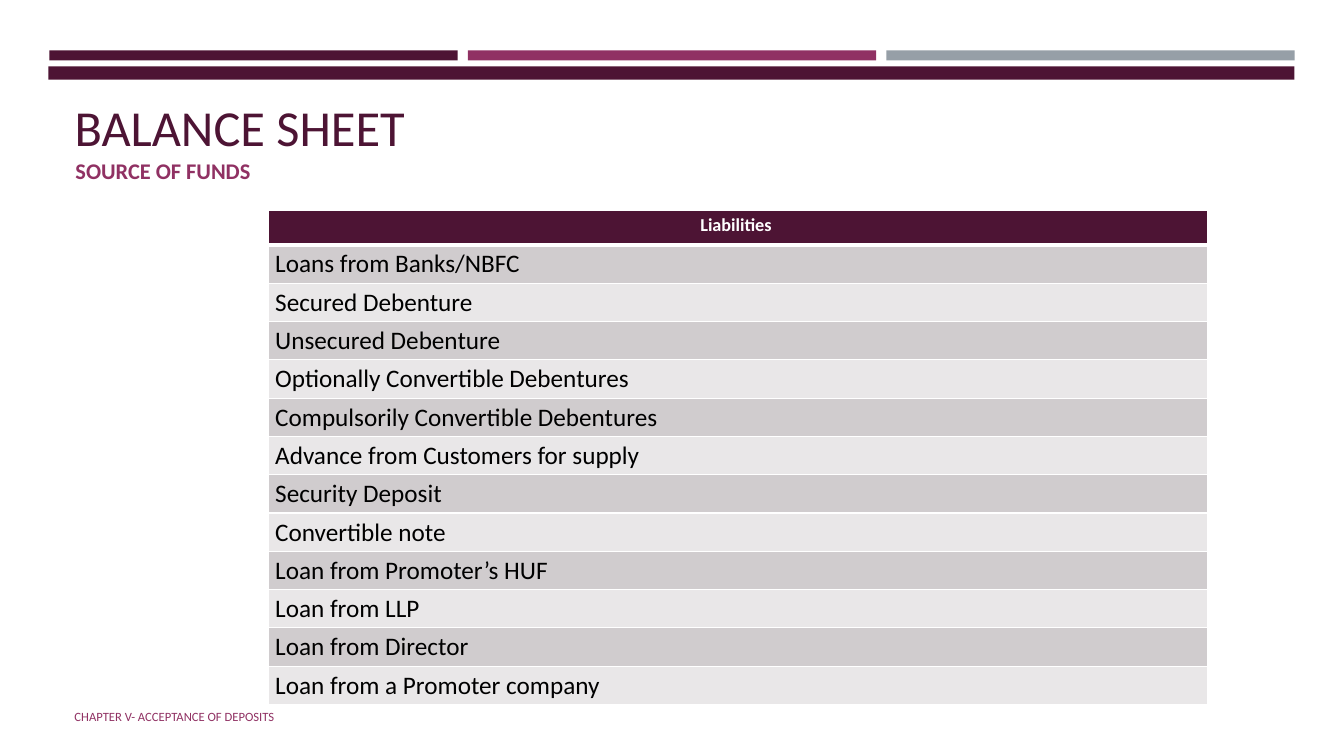
from dataclasses import dataclass
from typing import Any

from lxml.etree import SubElement
from pptx import Presentation
from pptx.dml.color import RGBColor
from pptx.enum.shapes import MSO_SHAPE
from pptx.enum.text import MSO_ANCHOR, PP_ALIGN
from pptx.oxml.ns import qn
from pptx.util import Inches, Pt

PLUM = RGBColor(0x4D, 0x14, 0x34)
ROSE = RGBColor(0x90, 0x31, 0x63)
GREY = RGBColor(0x96, 0x9F, 0xA7)
WHITE = RGBColor(0xFF, 0xFF, 0xFF)
BLACK = RGBColor(0x00, 0x00, 0x00)
BANDS = (RGBColor(0xD0, 0xCC, 0xCE), RGBColor(0xE9, 0xE7, 0xE8))

FUNDS = (
    "Loans from Banks/NBFC",
    "Secured Debenture",
    "Unsecured Debenture",
    "Optionally Convertible Debentures",
    "Compulsorily Convertible Debentures",
    "Advance from Customers for supply",
    "Security Deposit",
    "Convertible note",
    "Loan from Promoter’s HUF",
    "Loan from LLP",
    "Loan from Director",
    "Loan from a Promoter company",
)


@dataclass(frozen=True)
class Bar:
    left: float
    top: float
    width: float
    height: float
    color: RGBColor


@dataclass(frozen=True)
class Label:
    text: str
    size: int
    color: RGBColor
    bold: bool = False
    align: PP_ALIGN = PP_ALIGN.LEFT
    before: int = 0
    after: int = 0


BARS = (
    *(Bar(0.49 + 4.15 * i, 0.5, 4.05, 0.1, color)
      for i, color in enumerate((PLUM, ROSE, GREY))),
    Bar(0.48, 0.66, 12.36, 0.13, PLUM),
)


def apply(target: Any, values: dict[str, Any]) -> None:
    for name, value in values.items():
        setattr(target, name, value)


def draw_bar(slide: Any, bar: Bar) -> None:
    box = map(Inches, (bar.left, bar.top, bar.width, bar.height))
    shape = slide.shapes.add_shape(MSO_SHAPE.RECTANGLE, *box)
    shape.shadow.inherit = False
    shape.fill.solid()
    shape.fill.fore_color.rgb = bar.color
    shape.line.fill.background()


def write(frame: Any, label: Label) -> None:
    line = frame.paragraphs[0]
    apply(line, {
        "alignment": label.align,
        "space_before": Pt(label.before),
        "space_after": Pt(label.after),
        "line_spacing": 1.0,
    })
    run = line.add_run()
    run.text = label.text
    apply(run.font, {
        "name": "Calibri", "size": Pt(label.size), "bold": label.bold,
    })
    run.font.color.rgb = label.color


def place(shape: Any, box: tuple[float, ...], anchor: MSO_ANCHOR,
          label: Label) -> None:
    apply(shape, dict(zip(("left", "top", "width", "height"), map(Inches, box))))
    apply(shape.text_frame, {"word_wrap": True, "vertical_anchor": anchor})
    write(shape.text_frame, label)


def draw_edge(cell: Any, side: str, width: int) -> None:
    edge = SubElement(cell._tc.get_or_add_tcPr(), qn(f"a:{side}"), w=str(Pt(width)))
    fill = SubElement(edge, qn("a:solidFill"))
    SubElement(fill, qn("a:srgbClr"), val=str(WHITE))


def fill_cell(cell: Any, label: Label, color: RGBColor,
              top: int, base: int) -> None:
    apply(cell, {
        "margin_left": Inches(0.07), "margin_right": Inches(0.07),
        "margin_top": Inches(0.04), "margin_bottom": Inches(0.04),
    })
    write(cell.text_frame, label)
    for side, width in {"lnL": 1, "lnR": 1, "lnT": top, "lnB": base}.items():
        draw_edge(cell, side, width)
    cell.fill.solid()
    cell.fill.fore_color.rgb = color


def draw_table(slide: Any) -> None:
    head, step = 0.34, 0.38
    box = map(Inches, (2.66, 2.09, 9.32, head + step * len(FUNDS)))
    table = slide.shapes.add_table(len(FUNDS) + 1, 1, *box).table
    for i, row in enumerate(table.rows):
        row.height = Inches(step if i else head)
    title = Label("Liabilities ", 13, WHITE, True, PP_ALIGN.CENTER)
    fill_cell(table.cell(0, 0), title, PLUM, 1, 3)
    for i, fund in enumerate(FUNDS):
        fill_cell(table.cell(i + 1, 0), Label(fund, 18, BLACK),
                  BANDS[i % 2], 1 if i else 3, 1)


def main() -> None:
    deck = Presentation()
    apply(deck, {"slide_width": Inches(13.33), "slide_height": Inches(7.5)})
    slide = deck.slides.add_slide(deck.slide_layouts[5])
    for bar in BARS:
        draw_bar(slide, bar)
    title = slide.shapes.title
    place(title, (0.64, 0.79, 12.02, 0.78), MSO_ANCHOR.BOTTOM,
          Label("BALANCE SHEET", 36, PLUM))
    title.text_frame.margin_bottom = Inches(0.02)
    place(slide.shapes.add_textbox(0, 0, 0, 0), (0.65, 1.51, 12.02, 0.57),
          MSO_ANCHOR.TOP,
          Label("SOURCE OF FUNDS", 16, ROSE, True, before=3, after=6))
    draw_table(slide)
    place(slide.shapes.add_textbox(0, 0, 0, 0), (0.64, 6.91, 7.56, 0.4),
          MSO_ANCHOR.MIDDLE,
          Label("CHAPTER V- ACCEPTANCE OF DEPOSITS", 9, ROSE))
    deck.save("out.pptx")


if __name__ == "__main__":
    main()
